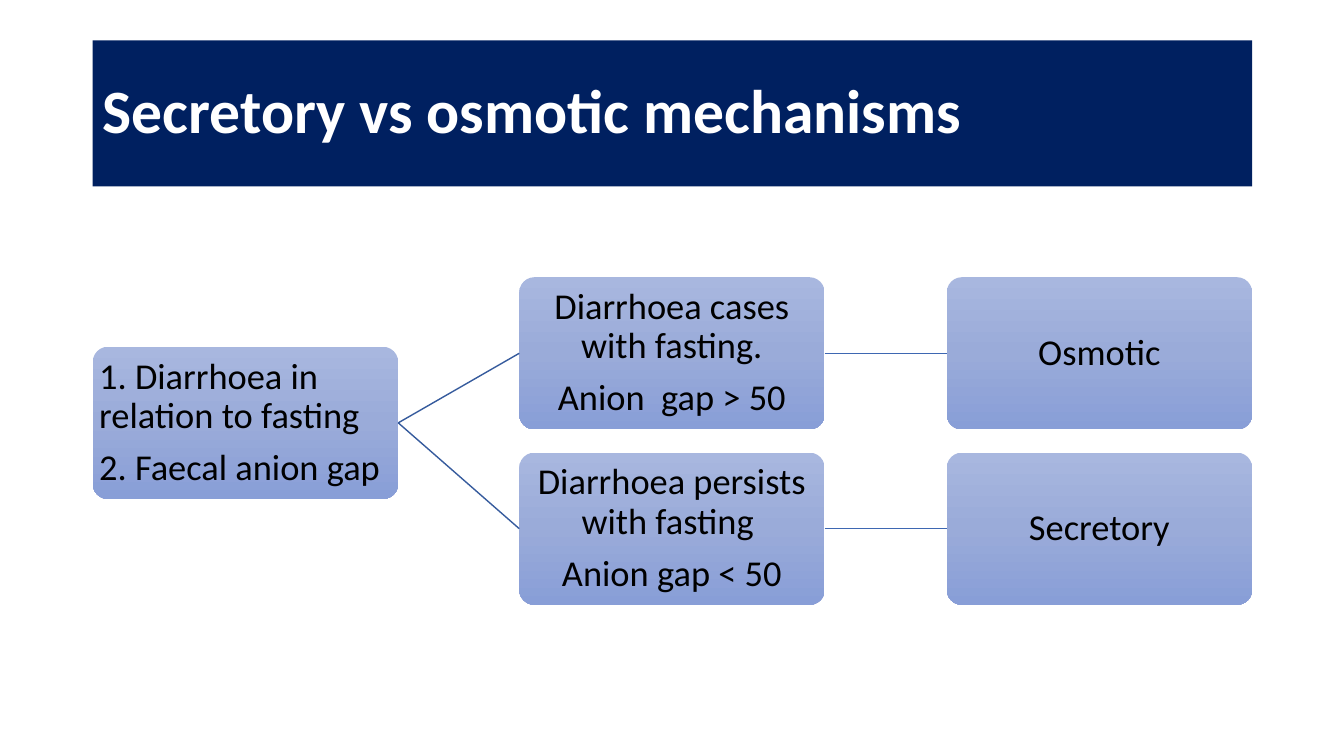
from copy import deepcopy

from pptx import Presentation
from pptx.dml.color import RGBColor
from pptx.enum.shapes import MSO_CONNECTOR as Connector, MSO_SHAPE as Preset
from pptx.enum.text import MSO_ANCHOR as Anchor, PP_ALIGN as Align
from pptx.oxml.ns import qn
from pptx.oxml.xmlchemy import OxmlElement
from pptx.util import Emu, Pt

NAVY = RGBColor(0x00, 0x20, 0x60)
WHITE = RGBColor(0xFF, 0xFF, 0xFF)
BLACK = RGBColor(0x00, 0x00, 0x00)
BRANCH_BLUE = RGBColor(0x36, 0x5B, 0x9D)
RESULT_BLUE = RGBColor(0x3E, 0x67, 0xB2)
NODE_STOPS = [
    (0, RGBColor(0xA8, 0xB7, 0xDF)),
    (0.5, RGBColor(0x9A, 0xAB, 0xD9)),
    (1, RGBColor(0x88, 0x9E, 0xD7)),
]
FONT = "Calibri"
NODE_W, NODE_H, ROW_GAP = 303, 151, 23
ROOT_DROP = 69
LEFT_SITE, RIGHT_SITE = 1, 3

ROOT_TEXT = ["1. Diarrhoea in relation to fasting", "2. Faecal anion gap"]
BRANCHES = [
    (["Diarrhoea cases with fasting.", "Anion  gap > 50"], ["Osmotic"]),
    (["Diarrhoea persists with fasting ", "Anion gap < 50"], ["Secretory"]),
]


def px(length):
    return Emu(length * 9144)


def write_text(shape, lines, size, color, bold=False, align=Align.LEFT,
               after=0, inset_x=2, inset_y=2):
    frame = shape.text_frame
    frame.word_wrap = True
    frame.vertical_anchor = Anchor.MIDDLE
    frame.margin_left = frame.margin_right = px(inset_x)
    frame.margin_top = frame.margin_bottom = px(inset_y)
    for index, line in enumerate(lines):
        para = frame.add_paragraph() if index else frame.paragraphs[0]
        para.alignment = align
        para.line_spacing = 0.9
        para.space_after = Pt(after)
        span = para.add_run()
        span.text = line
        span.font.name = FONT
        span.font.size = Pt(size)
        span.font.bold = bold
        span.font.color.rgb = color


def add_box(page, preset, left, top, width, height):
    box = page.shapes.add_shape(preset, px(left), px(top), px(width), px(height))
    box.shadow.inherit = False
    box.line.fill.background()
    return box


def add_title(page, left, top, width, height):
    banner = add_box(page, Preset.RECTANGLE, left, top, width, height)
    banner.fill.solid()
    banner.fill.fore_color.rgb = NAVY
    write_text(banner, ["Secretory vs osmotic mechanisms"], 44, WHITE,
               bold=True, inset_x=10, inset_y=5)


def add_node(page, left, top, lines, align=Align.CENTER):
    node = add_box(page, Preset.ROUNDED_RECTANGLE, left, top, NODE_W, NODE_H)
    node.adjustments[0] = 0.1
    node.fill.gradient()
    node.fill.gradient_angle = 270
    stop_list = node.element.spPr.find(".//" + qn("a:gsLst"))
    stop_list.insert(1, deepcopy(stop_list[0]))
    for stop, (position, color) in zip(node.fill.gradient_stops, NODE_STOPS):
        stop.position = position
        stop.color.rgb = color
    write_text(node, lines, 26, BLACK, align=align, after=9)
    return node


def link_nodes(page, source, target, color):
    link = page.shapes.add_connector(Connector.STRAIGHT, 0, 0, 0, 0)
    link.begin_connect(source, RIGHT_SITE)
    link.end_connect(target, LEFT_SITE)
    link.line.color.rgb = color
    link.line.width = Pt(1)
    link.element.spPr.append(OxmlElement("a:effectLst"))


def add_tree(page, left, top, width):
    pitch = (width - NODE_W) // 2
    root = add_node(page, left, top + ROOT_DROP, ROOT_TEXT, align=Align.LEFT)
    for row, (finding, mechanism) in enumerate(BRANCHES):
        row_top = top + row * (NODE_H + ROW_GAP)
        branch = add_node(page, left + pitch, row_top, finding)
        result = add_node(page, left + width - NODE_W, row_top, mechanism)
        link_nodes(page, root, branch, BRANCH_BLUE)
        link_nodes(page, branch, result, RESULT_BLUE)


def main():
    deck = Presentation()
    deck.slide_width, deck.slide_height = px(1333), px(750)
    page = deck.slides.add_slide(deck.slide_layouts[6])
    add_title(page, 92, 40, 1150, 145)
    add_tree(page, 92, 275, 1150)
    deck.save("out.pptx")


if __name__ == "__main__":
    main()
